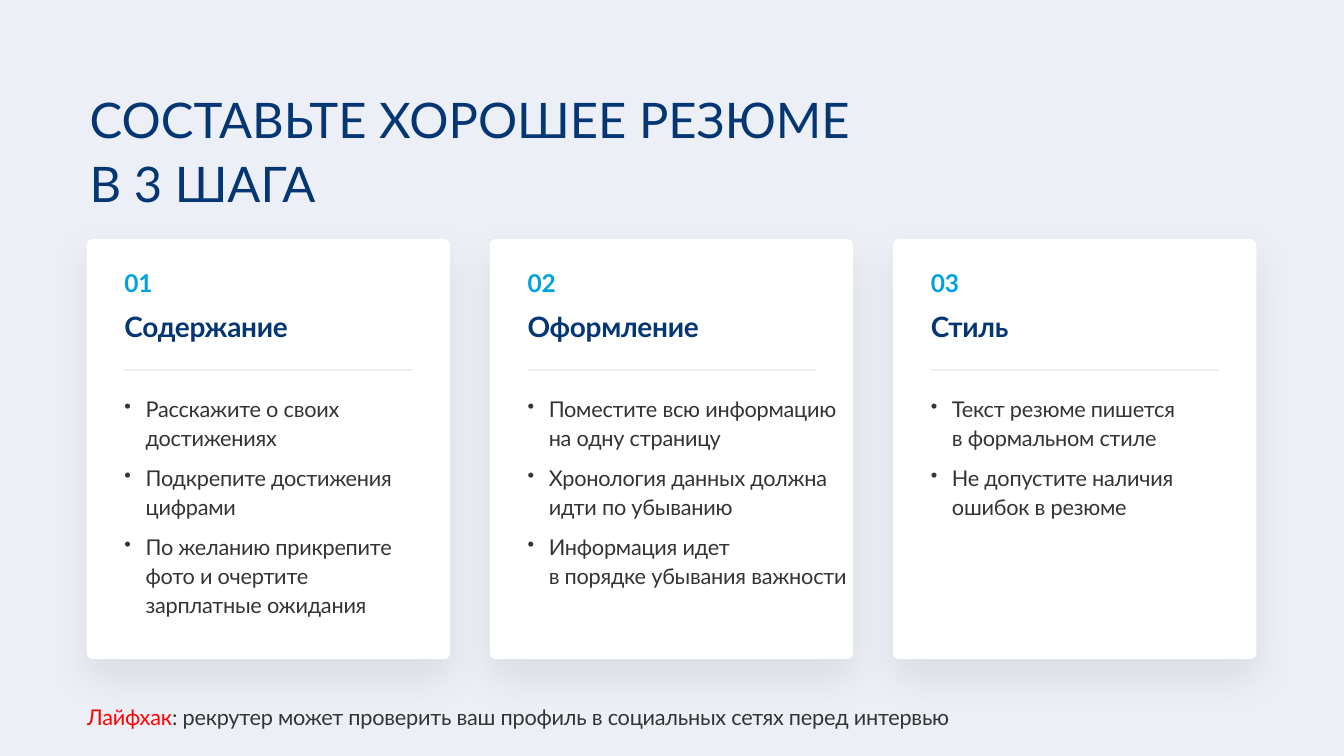
from lxml import etree
from pptx import Presentation
from pptx.dml.color import RGBColor
from pptx.enum.shapes import MSO_CONNECTOR, MSO_SHAPE
from pptx.enum.text import MSO_ANCHOR, MSO_AUTO_SIZE
from pptx.oxml.ns import qn
from pptx.util import Pt

ROUNDED = MSO_SHAPE.ROUNDED_RECTANGLE
STRAIGHT = MSO_CONNECTOR.STRAIGHT
TOP, BOTTOM = MSO_ANCHOR.TOP, MSO_ANCHOR.BOTTOM
GROW = MSO_AUTO_SIZE.SHAPE_TO_FIT_TEXT

PX = 9144  # EMU per px, 100 px to the inch
THEME = {
    "font": "Lato",
    "background": "ECF0F6", "card": "FFFFFF", "shadow": "000000",
    "navy": "053674", "blue": "00A1E2", "body": "343434", "accent": "FF0000",
    "title_size": 70, "heading_size": 40, "number_size": 35, "body_size": 31,
}


def add_text(left, top, width, height, paragraphs, size, bold=False, spacing=1.1,
             tracking=-30, anchor=TOP, inset=0, bullets=False):
    """Each paragraph is a list of (text, colour) runs; a newline is a line break."""
    box = slide.shapes.add_textbox(left * PX, top * PX, width * PX, height * PX)
    frame = box.text_frame
    frame.word_wrap = True
    frame.auto_size = GROW
    frame.vertical_anchor = anchor
    frame.margin_left = frame.margin_right = inset * PX
    frame.margin_top = frame.margin_bottom = inset * PX
    for index, runs in enumerate(paragraphs):
        paragraph = frame.paragraphs[0] if index == 0 else frame.add_paragraph()
        if bullets:
            props = paragraph._p.get_or_add_pPr()
            props.set("marL", str(42 * PX))
            props.set("indent", str(-42 * PX))
            colour = etree.SubElement(props, qn("a:buClr"))
            etree.SubElement(colour, qn("a:srgbClr"), val=THEME["body"])
            etree.SubElement(props, qn("a:buSzPct"), val="90000")
            etree.SubElement(props, qn("a:buChar"), char="•")
        paragraph.line_spacing = spacing
        if index:
            paragraph.space_before = Pt(17)
        for text, colour in runs:
            for line_number, line in enumerate(text.split("\n")):
                if line_number:
                    paragraph.add_line_break()
                run = paragraph.add_run()
                run.text = line
                run.font.name = THEME["font"]
                run.font.size = Pt(size)
                run.font.bold = bold
                run.font.color.rgb = RGBColor.from_string(colour)
                run._r.get_or_add_rPr().set("spc", str(tracking))


def add_alpha(parent, colour, percent):
    node = etree.SubElement(parent, qn("a:srgbClr"), val=colour)
    etree.SubElement(node, qn("a:alpha"), val=str(percent * 1000))


prs = Presentation()
prs.slide_width = 2667 * PX
prs.slide_height = 1500 * PX
slide = prs.slides.add_slide(prs.slide_layouts[6])
slide.background.fill.solid()
slide.background.fill.fore_color.rgb = RGBColor.from_string(THEME["background"])

# Title
add_text(172, 159, 2322, 268, [[("СОСТАВЬТЕ ХОРОШЕЕ РЕЗЮМЕ \nВ 3 ШАГА", THEME["navy"])]],
         THEME["title_size"], tracking=0, inset=6)

# Step cards: heading, width of the advice list, advice
steps = [
    ("Содержание", 572, ["Расскажите о своих достижениях",
                         "Подкрепите достижения цифрами",
                         "По желанию прикрепите фото и очертите зарплатные ожидания"]),
    ("Оформление", 646, ["Поместите всю информацию на одну страницу",
                         "Хронология данных должна идти по убыванию",
                         "Информация идет\nв порядке убывания важности"]),
    ("Стиль", 572, ["Текст резюме пишется \nв формальном стиле",
                    "Не допустите наличия ошибок в резюме"]),
]
CARD_LEFT, CARD_TOP, CARD_WIDTH, CARD_HEIGHT = 172, 474, 721, 834
CARD_PITCH, CARD_PADDING = 800, 75

for index, (heading, advice_width, advice) in enumerate(steps):
    card_left = CARD_LEFT + index * CARD_PITCH
    left = card_left + CARD_PADDING

    # Card with a soft shadow below
    card = slide.shapes.add_shape(ROUNDED, card_left * PX, CARD_TOP * PX,
                                  CARD_WIDTH * PX, CARD_HEIGHT * PX)
    card.adjustments[0] = 0.017
    card.fill.solid()
    card.fill.fore_color.rgb = RGBColor.from_string(THEME["card"])
    card.line.fill.background()
    card.shadow.inherit = False
    effects = card._element.spPr.find(qn("a:effectLst"))
    shadow = etree.SubElement(effects, qn("a:outerShdw"), blurRad=str(Pt(55)),
                              dist=str(Pt(24.9)), dir="5400000", algn="t", rotWithShape="0")
    add_alpha(shadow, THEME["shadow"], 7)

    # Heading
    add_text(left, 627, 556, 53, [[(heading, THEME["navy"])]], THEME["heading_size"],
             bold=True, spacing=0.8, tracking=-40, anchor=BOTTOM)

    # Divider
    divider = slide.shapes.add_connector(STRAIGHT, left * PX, 734 * PX,
                                         (left + 572) * PX, 734 * PX)
    divider.line.width = Pt(2)
    divider.line.fill.solid()
    stroke = divider.line._ln.find(qn("a:solidFill"))
    add_alpha(stroke, THEME["navy"], 10)
    etree.SubElement(divider._element.spPr, qn("a:effectLst"))

    # Advice and step number
    add_text(left, 780, advice_width, 445 if len(advice) == 3 else 251,
             [[(item, THEME["body"])] for item in advice], THEME["body_size"], bullets=True)
    add_text(left, 543, 125, 47, [[(f"{index + 1:02}", THEME["blue"])]],
             THEME["number_size"], bold=True, spacing=0.8, anchor=BOTTOM)

# Tip
add_text(173, 1392, 2138, 57,
         [[("Лайфхак", THEME["accent"]),
           (": рекрутер может проверить ваш профиль в социальных сетях перед интервью",
            THEME["body"])]], THEME["body_size"])

prs.save("out.pptx")
